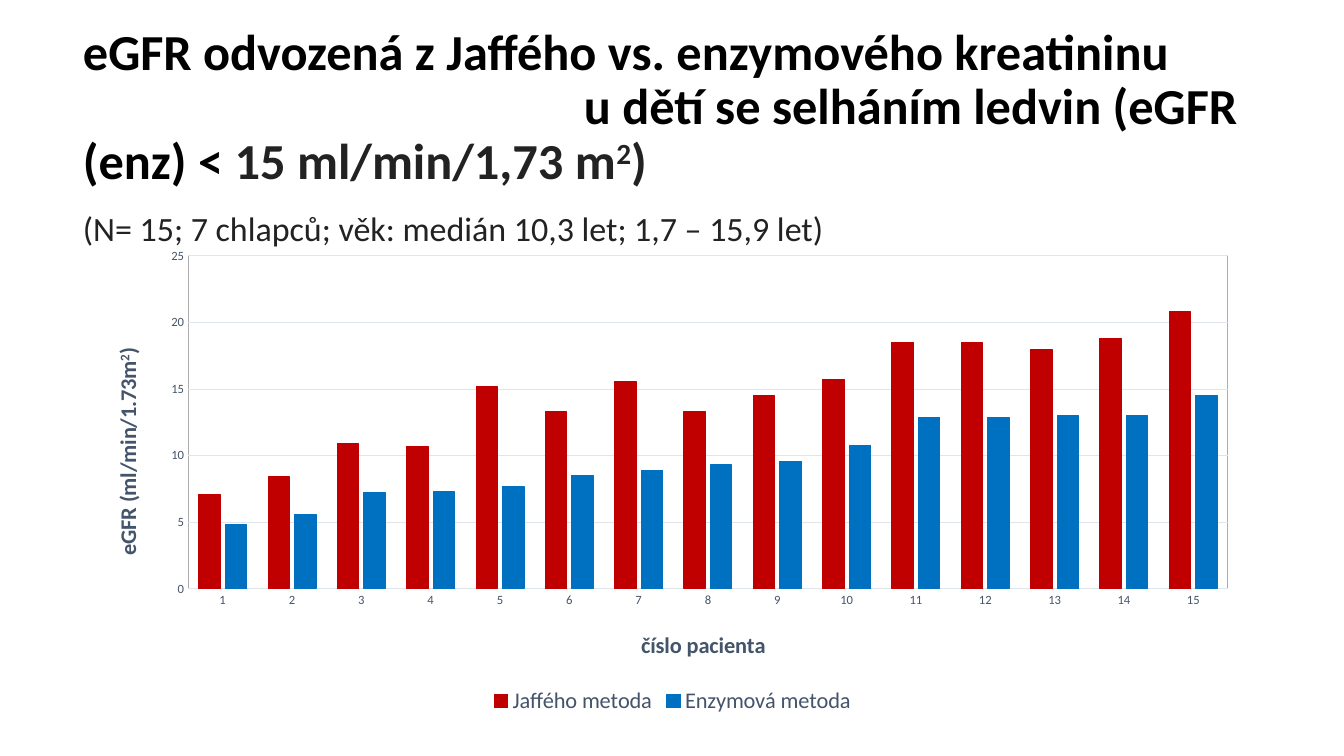
"""Builds the slide comparing eGFR from Jaffé and enzymatic creatinine in children."""
from lxml import etree
from pptx import Presentation
from pptx.chart.data import CategoryChartData
from pptx.dml.color import RGBColor as Rgb
from pptx.enum.chart import XL_CHART_TYPE as ChartType, XL_LEGEND_POSITION as LegendSpot, XL_TICK_MARK as Tick
from pptx.enum.text import MSO_ANCHOR as Anchor
from pptx.oxml.ns import qn
from pptx.util import Pt

PX = 9071
FONT = "Calibri"
COLORS = {"black": "000000", "ink": "222222", "slate": "44546A", "grid": "E0E5EB",
          "frame": "ABABAB", "jaffe": "C00000", "enzyme": "0070C0"}
CHART = {"left": 93, "top": 239, "width": 1159, "height": 480}


def style(font, color, size, bold=False):
    for name, value in {"name": FONT, "size": Pt(size), "bold": bold}.items():
        setattr(font, name, value)
    font.color.rgb = Rgb.from_string(COLORS[color])


def set_layout(parent, index, inner=False, **lengths):
    for old in parent.findall(qn("c:layout")):
        parent.remove(old)
    layout = etree.Element(qn("c:layout"))
    manual = etree.SubElement(layout, qn("c:manualLayout"))
    values = {"layoutTarget": "inner"} if inner else {}
    values.update(xMode="edge", yMode="edge")
    for name, length in lengths.items():
        whole = CHART["width"] if name in "xw" else CHART["height"]
        values[name] = str(round(length / whole, 4))
    for name, value in values.items():
        etree.SubElement(manual, qn(f"c:{name}")).set("val", value)
    parent.insert(index, layout)


deck = Presentation()
deck.slide_width, deck.slide_height = 1344 * PX, 756 * PX
page = deck.slides.add_slide(deck.slide_layouts[6])

box = page.shapes.add_textbox(73 * PX, 52 * PX, 1199 * PX, 172 * PX)
frame = box.text_frame
frame.word_wrap = True
frame.vertical_anchor = Anchor.MIDDLE
lines = [
    (0, 0, [("eGFR odvozená z Jaffého vs. enzymového kreatininu", "black", 36, True, 0)]),
    (501, 0, [("u dětí se selháním ledvin (eGFR (enz) ˂ ", "black", 36, True, 0),
              ("15 ml/min/1,73 m", "ink", 36, True, 0),
              ("2", "ink", 36, True, 30000),
              (")", "ink", 36, True, 0)]),
    (0, 16, [("(N= 15; 7 chlapců; věk: medián 10,3 let; 1,7 – 15,9 let)", "ink", 24.3, False, 0)]),
]
for number, (indent, space, spans) in enumerate(lines):
    para = frame.add_paragraph() if number else frame.paragraphs[0]
    para.line_spacing = 0.9
    para.space_before = Pt(space)
    para._p.get_or_add_pPr().set("indent", str(indent * PX))
    for text, color, size, bold, baseline in spans:
        span = para.add_run()
        span.text = text
        style(span.font, color, size, bold)
        span._r.get_or_add_rPr().set("baseline", str(baseline))

data = CategoryChartData()
data.categories = [str(patient) for patient in range(1, 16)]
data.add_series("Jaffého metoda", [7.1, 8.4, 10.9, 10.7, 15.2, 13.3, 15.6, 13.3,
                                   14.5, 15.7, 18.5, 18.5, 18, 18.8, 20.8])
data.add_series("Enzymová metoda", [4.8, 5.6, 7.2, 7.3, 7.7, 8.5, 8.9, 9.3,
                                    9.6, 10.8, 12.9, 12.9, 13, 13, 14.5])
place = [length * PX for length in CHART.values()]
chart = page.shapes.add_chart(ChartType.COLUMN_CLUSTERED, *place, data).chart
style(chart.font, "black", 10)
chart.has_title = False
chart.has_legend = True
chart.legend.position = LegendSpot.BOTTOM
chart.legend.include_in_layout = False
style(chart.legend.font, "slate", 16)

plot = chart.plots[0]
for name, value in {"gap_width": 100, "overlap": -24, "vary_by_categories": False}.items():
    setattr(plot, name, value)
for series, color in zip(plot.series, ("jaffe", "enzyme")):
    series.format.fill.solid()
    series.format.fill.fore_color.rgb = Rgb.from_string(COLORS[color])
    series.format.line.color.rgb = Rgb.from_string(COLORS[color])
    series.format.line.width = Pt(0.75)

patients, rates = chart.category_axis, chart.value_axis
axes = [
    (patients, [("číslo pacienta", 0)], {"x": 544, "y": 387}),
    (rates, [("eGFR (ml/min/1.73m", 0), ("2", 30000), (")", 0)], {"x": 17, "y": 106}),
]
for axis, spans, spot in axes:
    axis.major_tick_mark = axis.minor_tick_mark = Tick.NONE
    style(axis.tick_labels.font, "slate", 9)
    para = axis.axis_title.text_frame.paragraphs[0]
    for text, baseline in spans:
        span = para.add_run()
        span.text = text
        style(span.font, "slate", 16, True)
        span._r.get_or_add_rPr().set("baseline", str(baseline))
    set_layout(axis.axis_title._element, 1, **spot)

for name, value in {"minimum_scale": 0, "maximum_scale": 25, "major_unit": 5}.items():
    setattr(rates, name, value)
rates.format.line.fill.background()
for line in (patients.format.line, rates.major_gridlines.format.line):
    line.color.rgb = Rgb.from_string(COLORS["grid"])
    line.width = Pt(0.75)
turn = rates.axis_title.text_frame._txBody.find(qn("a:bodyPr"))
turn.set("rot", "-5400000")
turn.set("vert", "horz")

area = chart._chartSpace.chart.plotArea
set_layout(area, 0, inner=True, x=95, y=17, w=1040, h=333)
border = etree.SubElement(area, qn("c:spPr"))
etree.SubElement(border, qn("a:noFill"))
outline = etree.SubElement(border, qn("a:ln"), w=str(Pt(0.75)))
fill = etree.SubElement(outline, qn("a:solidFill"))
etree.SubElement(fill, qn("a:srgbClr"), val=COLORS["frame"])

deck.save("out.pptx")
